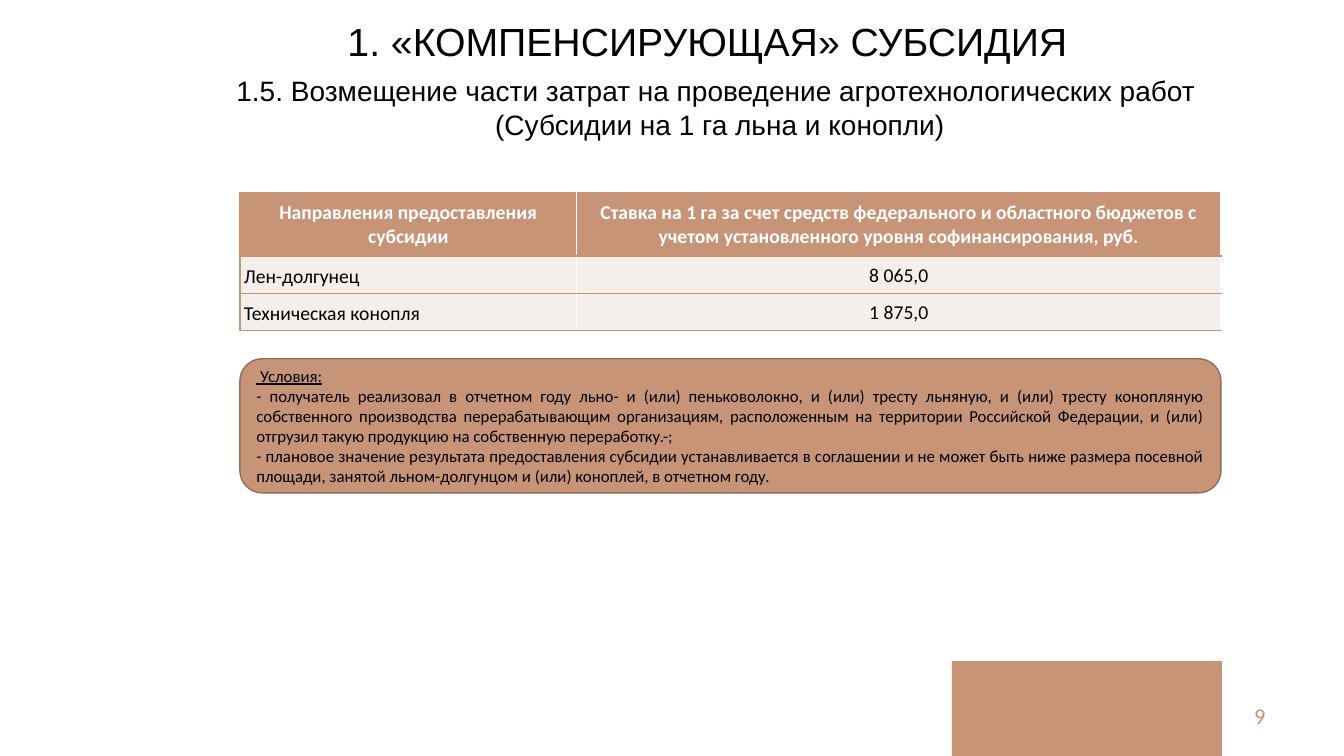
from lxml.etree import SubElement
from pptx import Presentation
from pptx.dml.color import RGBColor
from pptx.enum.shapes import MSO_SHAPE as Kind
from pptx.enum.text import MSO_ANCHOR as Anchor, MSO_AUTO_SIZE as Auto, PP_ALIGN as Align
from pptx.oxml.ns import qn
from pptx.util import Inches, Pt

CLAY = RGBColor(0xC7, 0x94, 0x78)
RUST = RGBColor(0x93, 0x6D, 0x59)
PALE = RGBColor(0xF5, 0xEF, 0xEC)
WHITE = RGBColor(0xFF, 0xFF, 0xFF)
BLACK = RGBColor(0, 0, 0)


def write(frame, lines, align, color=BLACK, **form):
    frame.word_wrap = True
    for i, line in enumerate(lines):
        para = frame.paragraphs[0] if i == 0 else frame.add_paragraph()
        para.alignment = align
        run = para.add_run()
        run.text = line
        run.font.color.rgb = color
        for key, val in form.items():
            setattr(run.font, key, val)


def edge(cell, side):
    line = SubElement(cell._tc.get_or_add_tcPr(), qn("a:" + side), w="12700")
    fill = SubElement(line, qn("a:solidFill"))
    SubElement(fill, qn("a:srgbClr"), val=str(CLAY))


deck = Presentation()
deck.slide_width = Inches(13.33)
deck.slide_height = Inches(7.5)
slide = deck.slides.add_slide(deck.slide_layouts[5])
shapes = slide.shapes

block = shapes.add_shape(Kind.RECTANGLE, Inches(9.44), Inches(6.56), Inches(2.68), Inches(0.94))
block.shadow.inherit = False
block.fill.solid()
block.fill.fore_color.rgb = CLAY
block.line.fill.background()

page = shapes.add_textbox(Inches(9.65), Inches(6.9), Inches(3), Inches(0.4))
page.text_frame.vertical_anchor = Anchor.MIDDLE
write(page.text_frame, ["9"], Align.RIGHT, CLAY, name="Calibri", size=Pt(16))

rows = [
    ("Направления предоставления субсидии",
     "Ставка на 1 га за счет средств федерального и областного бюджетов с учетом "
     "установленного уровня софинансирования, руб."),
    ("Лен-долгунец", "8 065,0"),
    ("Техническая конопля", "1 875,0"),
]
grid = shapes.add_table(3, 2, Inches(2.38), Inches(1.91), Inches(9.73), Inches(1.36)).table
for col, wide in zip(grid.columns, (3.34, 6.39)):
    col.width = Inches(wide)
for row, high in zip(grid.rows, (0.63, 0.37, 0.37)):
    row.height = Inches(high)
for r, texts in enumerate(rows):
    head = r == 0
    for c, text in enumerate(texts):
        cell = grid.cell(r, c)
        pad = Inches(0.08 if head else 0.04)
        for side in ("left", "right", "top", "bottom"):
            setattr(cell, "margin_" + side, pad)
        cell.vertical_anchor = Anchor.TOP if c else Anchor.MIDDLE
        write(cell.text_frame, [text], Align.CENTER if head or c else Align.LEFT,
              WHITE if head else BLACK, name="Calibri", size=Pt(14), bold=head)
        if not head:
            cell.text_frame.paragraphs[0].line_spacing = 1.15
        for side in ("lnT", "lnB") if c else ("lnL", "lnT", "lnB"):
            edge(cell, side)
        cell.fill.solid()
        cell.fill.fore_color.rgb = CLAY if head else PALE

topic = shapes.add_textbox(Inches(2.18), Inches(0.68), Inches(9.92), Inches(0.77))
write(topic.text_frame, [
    "1.5. Возмещение части затрат на проведение агротехнологических работ ",
    "(Субсидии на 1 га льна и конопли)",
], Align.CENTER, name="Arial", size=Pt(20))

title = shapes.title
title.left, title.top = Inches(3.34), Inches(0.12)
title.width, title.height = Inches(7.35), Inches(0.57)
frame = title.text_frame
frame.auto_size = Auto.NONE
frame.vertical_anchor = Anchor.TOP
frame.margin_left = frame.margin_right = 0
write(frame, ["1. «КОМПЕНСИРУЮЩАЯ» СУБСИДИЯ"], Align.CENTER, name="Arial", size=Pt(28))

terms = shapes.add_shape(Kind.ROUNDED_RECTANGLE, Inches(2.38), Inches(3.56), Inches(9.73), Inches(1.33))
terms.shadow.inherit = False
terms.fill.solid()
terms.fill.fore_color.rgb = CLAY
terms.line.color.rgb = RUST
terms.line.width = Pt(1)
terms.text_frame.vertical_anchor = Anchor.MIDDLE
write(terms.text_frame, [
    " Условия:",
    "- получатель реализовал в отчетном году льно- и (или) пеньковолокно, и (или) тресту льняную, "
    "и (или) тресту конопляную собственного производства перерабатывающим организациям, "
    "расположенным на территории Российской Федерации, и (или) отгрузил такую продукцию "
    "на собственную переработку.-;",
    "- плановое значение результата предоставления субсидии устанавливается в соглашении "
    "и не может быть ниже размера посевной площади, занятой льном-долгунцом и (или) коноплей, "
    "в отчетном году.",
], Align.JUSTIFY, name="Calibri", size=Pt(12))
terms.text_frame.paragraphs[0].runs[0].font.underline = True

deck.save("out.pptx")
